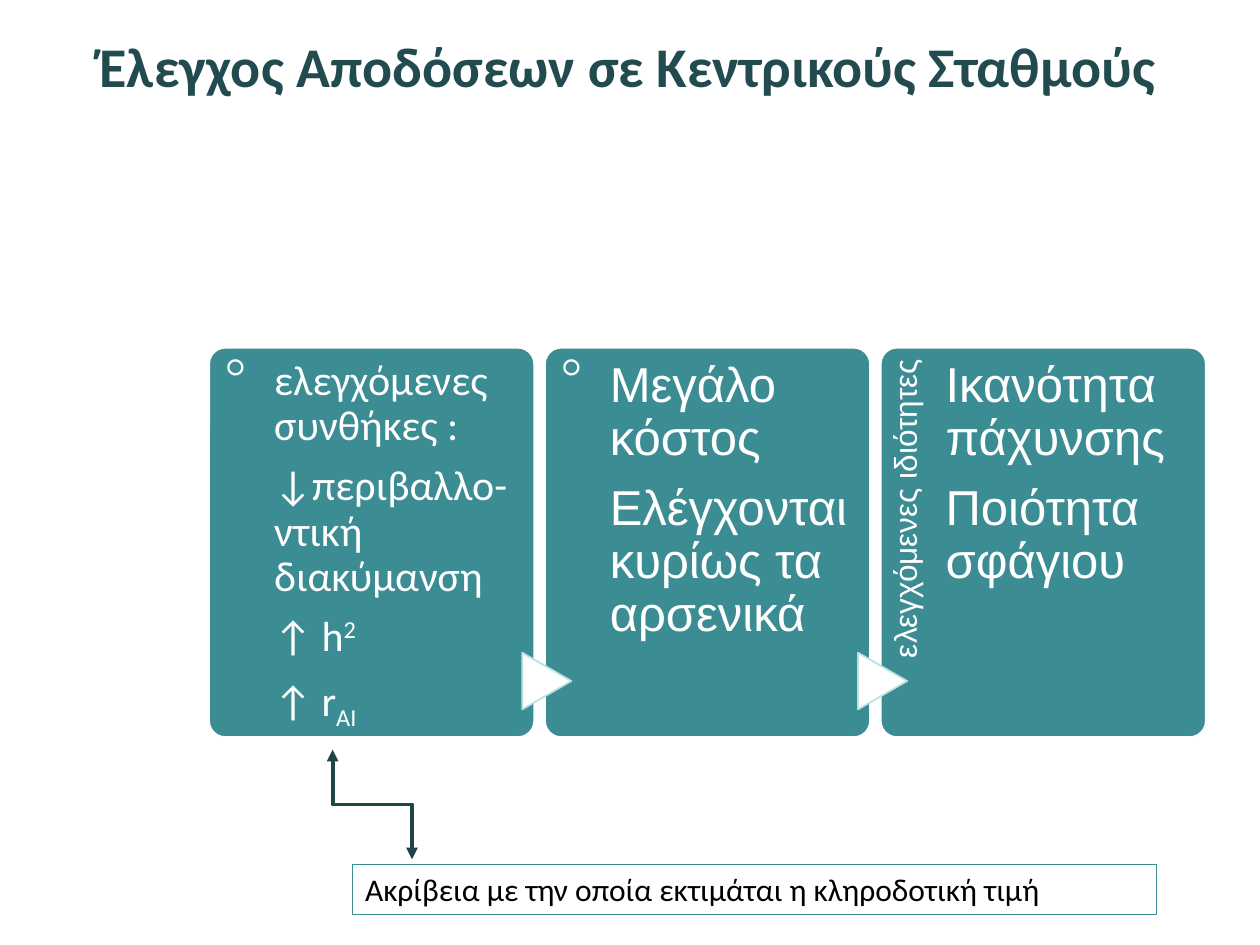
import pptx
import pptx.dml.color
import pptx.enum.shapes
import pptx.enum.text
import pptx.oxml
import pptx.oxml.ns
import pptx.util
from lxml import etree

RGB = pptx.dml.color.RGBColor
MSO = pptx.enum.shapes.MSO_SHAPE
ALIGN = pptx.enum.text.PP_ALIGN
qn = pptx.oxml.ns.qn

TEAL = RGB(0x3C, 0x8C, 0x93)
PALE = RGB(0xBB, 0xE0, 0xE3)
TITLE = RGB(0x22, 0x4B, 0x50)
DARK = RGB(0x1E, 0x46, 0x49)
WHITE = RGB(0xFF, 0xFF, 0xFF)
BLACK = RGB(0, 0, 0)

# Grid: 100 columns by 75 rows
CELL = pptx.util.Inches(0.1)
CARD_X, CARD_Y, CARD_W, CARD_H = 16.6, 27.6, 25.8, 30.9
PITCH = 26.65

CARDS = [
    ("○", "Calibri", 24, 0.09, [
        [("ελεγχόμενες συνθήκες :", 0)],
        [("↓περιβαλλο-ντική διακύμανση", 0)],
        [("↑ h", 0), ("2", 30)],
        [("↑ r", 0), ("AI", -25)]]),
    ("○", "Arial", 28, 0.1, [
        [("Μεγάλο κόστος", 0)],
        [("Ελέγχονται κυρίως τα αρσενικά", 0)]]),
    ("ελεγχόμενες ιδιότητες", "Arial", 28, 0.1, [
        [("Ικανότητα πάχυνσης", 0)],
        [("Ποιότητα σφάγιου", 0)]]),
]


class Deck:
    def __init__(self):
        self.prs = pptx.Presentation()
        self.prs.slide_width = 100 * CELL
        self.prs.slide_height = 75 * CELL
        self.s = self.prs.slides.add_slide(self.prs.slide_layouts[5])

    def box(self, *cells):
        return [round(c * CELL) for c in cells]

    def run(self, p, text, baseline=0, **fmt):
        r = p.add_run()
        r.text = text
        color = fmt.pop("color")
        for name, value in fmt.items():
            setattr(r.font, name, value)
        r.font.color.rgb = color
        if baseline:
            r.font._element.set("baseline", str(baseline * 1000))

    def title(self, text, cells):
        sp = self.s.shapes.title
        sp.left, sp.top, sp.width, sp.height = self.box(*cells)
        tf = sp.text_frame
        tf.vertical_anchor = pptx.enum.text.MSO_ANCHOR.MIDDLE
        p = tf.paragraphs[0]
        p.alignment = ALIGN.CENTER
        self.run(p, text, name="Calibri", size=pptx.util.Pt(32), bold=True, color=TITLE)

    def shape(self, kind, cells, fill, line, rotation=0):
        sp = self.s.shapes.add_shape(kind, *self.box(*cells))
        sp.shadow.inherit = False
        sp.rotation = rotation
        sp.fill.solid()
        sp.fill.fore_color.rgb = fill
        sp.line.color.rgb = line
        sp.line.width = pptx.util.Pt(1)
        return sp

    def text(self, cells, paragraphs, font, size, insets=None, color=WHITE,
             align=ALIGN.LEFT, rotation=0, spaced=True):
        sp = self.s.shapes.add_textbox(*self.box(*cells))
        sp.rotation = rotation
        tf = sp.text_frame
        tf.word_wrap = True
        for side, value in (insets or {}).items():
            setattr(tf, "margin_" + side, pptx.util.Inches(value))
        for i, runs in enumerate(paragraphs):
            p = tf.add_paragraph() if i else tf.paragraphs[0]
            p.alignment = align
            if spaced:
                self.spacing(p)
            for text, baseline in runs:
                self.run(p, text, baseline, name=font, size=pptx.util.Pt(size), color=color)
        return sp

    def spacing(self, p):
        p.line_spacing = 0.9
        p.space_after = pptx.util.Pt(0)
        after = p._p.pPr.find(qn("a:spcAft"))
        after.remove(after[0])
        etree.SubElement(after, qn("a:spcPct"), val="35000")

    def elbow(self, begin, end, rotation):
        c = self.s.shapes.add_connector(
            pptx.enum.shapes.MSO_CONNECTOR.ELBOW, *self.box(*begin, *end))
        c.line.color.rgb = DARK
        c.line.width = pptx.util.Pt(2.25)
        c._element.spPr.find(qn("a:xfrm")).set("rot", str(rotation * 60000))
        ln = c.line._get_or_add_ln()
        for tag in ("a:headEnd", "a:tailEnd"):
            etree.SubElement(ln, qn(tag), type="triangle")
        etree.SubElement(c._element.spPr, qn("a:effectLst"))


def main():
    d = Deck()
    d.title("Έλεγχος Αποδόσεων σε Κεντρικούς Σταθμούς", (2.7, 1.4, 94.3, 7.6))

    # Cards with a rotated label, an arrow from the card before, and a body
    for i, (label, font, size, top, body) in enumerate(CARDS):
        x = CARD_X + i * PITCH
        card = d.shape(MSO.ROUNDED_RECTANGLE, (x, CARD_Y, CARD_W, CARD_H), TEAL, WHITE)
        card.adjustments[0] = 0.05
        d.text((x - 10.1, 37.7, 25.4, 5.2), [[(label, 0)]],
               "Calibri" if label == "○" else "Arial", 18,
               dict(left=0, top=0.07, right=0.09, bottom=0),
               align=ALIGN.RIGHT, rotation=270)
        if i:
            d.shape(MSO.FLOWCHART_EXTRACT, (x - 2.1, 52.1, 4.5, 3.9), WHITE, PALE, 90)
        d.text((x + 5.15, CARD_Y, 19.2, CARD_H), body, font, size,
               dict(left=0, top=top, right=0, bottom=0))

    # Note explaining the accuracy symbol
    d.elbow((33.9, 60.7), (25.2, 67), 270)
    note = d.text((28, 68.6, 63.8, 4),
                  [[("Ακρίβεια με την οποία εκτιμάται η κληροδοτική τιμή", 0)]],
                  "Calibri", 18, color=BLACK, spaced=False)
    note.text_frame.auto_size = pptx.enum.text.MSO_AUTO_SIZE.SHAPE_TO_FIT_TEXT
    note.line.color.rgb = TEAL
    note.line.width = pptx.util.Pt(0.75)

    d.prs.save("out.pptx")


if __name__ == "__main__":
    main()
